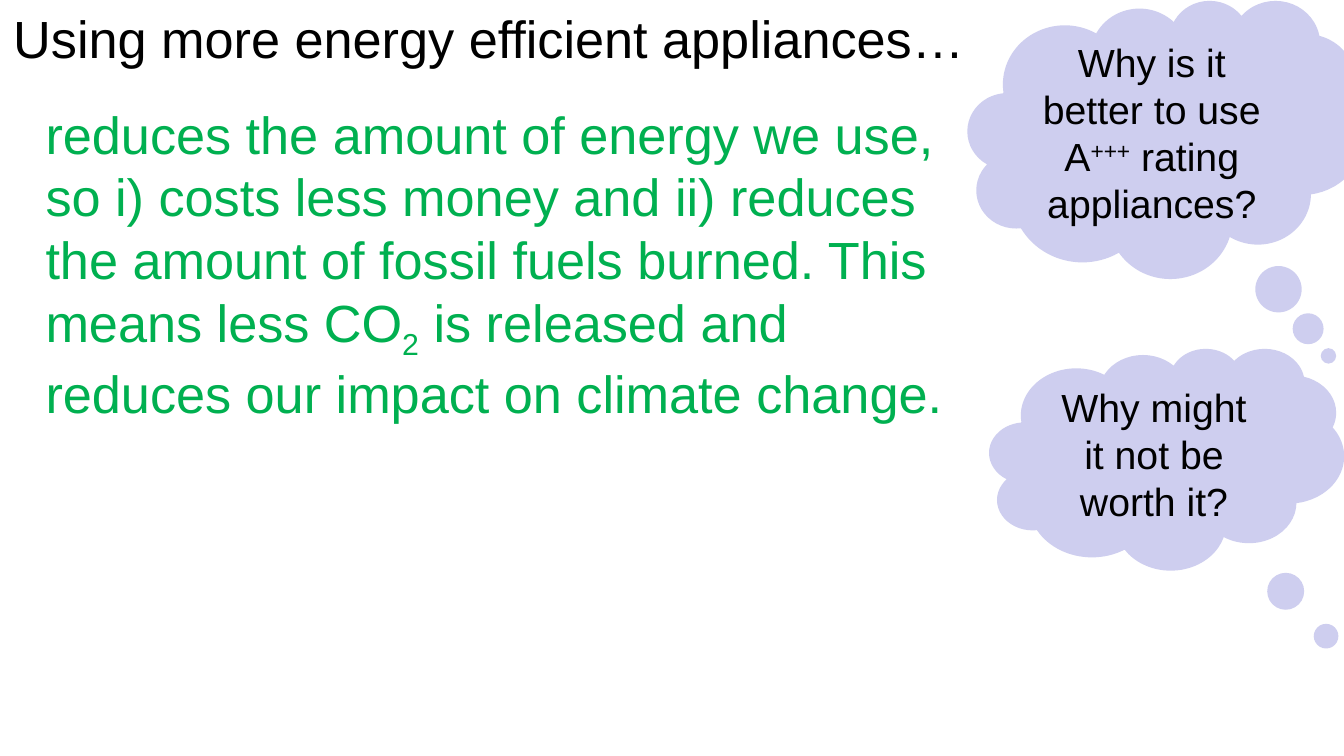
from pptx import Presentation
from pptx.dml.color import RGBColor
from pptx.enum.shapes import MSO_SHAPE as SHAPE
from pptx.enum.text import MSO_ANCHOR as ANCHOR, MSO_AUTO_SIZE as FIT, PP_ALIGN as ALIGN
from pptx.util import Pt

BLACK = RGBColor(0x00, 0x00, 0x00)
GREEN = RGBColor(0x00, 0xB0, 0x50)
LILAC = RGBColor(0xCE, 0xCE, 0xEF)


class Deck:
    """Style and current slide."""
    font = "Arial"
    body_size = 28
    cloud_size = 21

    def __init__(self, width, height):
        self.prs = Presentation()
        self.prs.slide_width, self.prs.slide_height = Pt(width), Pt(height)
        self.s = self.prs.slides.add_slide(self.prs.slide_layouts[6])

    def fill_text(self, tf, runs, size, color, align):
        """Fill one paragraph from (text, baseline in percent) pairs."""
        tf.word_wrap = True
        p = tf.paragraphs[0]
        p.alignment = align
        p.font.name, p.font.size = self.font, Pt(size)
        p.font.color.rgb = color
        for text, baseline in runs:
            r = p.add_run()
            r.text = text
            if baseline:
                r._r.get_or_add_rPr().set("baseline", str(baseline * 1000))

    def text(self, box, runs, color=BLACK):
        tf = self.s.shapes.add_textbox(*map(Pt, box)).text_frame
        self.fill_text(tf, runs, self.body_size, color, ALIGN.LEFT)
        tf.auto_size = FIT.SHAPE_TO_FIT_TEXT

    def cloud(self, box, tail, runs):
        sp = self.s.shapes.add_shape(SHAPE.CLOUD_CALLOUT, *map(Pt, box))
        sp.adjustments[0], sp.adjustments[1] = tail
        sp.shadow.inherit = False
        sp.fill.solid()
        sp.fill.fore_color.rgb = LILAC
        sp.line.fill.background()
        sp.text_frame.vertical_anchor = ANCHOR.MIDDLE
        self.fill_text(sp.text_frame, runs, self.cloud_size, BLACK, ALIGN.CENTER)


def main():
    deck = Deck(720, 405)

    # First question
    deck.cloud((518.4, 0, 212.4, 149), (0.41, 0.78), [
        ("Why is it better to use A", 0), ("+++", 30), (" rating appliances?", 0)])

    # Title and answer
    deck.text((0, 0, 530, 41), [("Using more energy efficient appliances…", 0)])
    deck.text((17.3, 51.1, 500.4, 177), [
        ("reduces the amount of energy we use, so i) costs less money and ii) reduces "
         "the amount of fossil fuels burned. This means less CO", 0),
        ("2", -25),
        (" is released and reduces our impact on climate change.", 0)], GREEN)

    # Second question
    deck.cloud((530, 186.5, 190, 118.8), (0.54, 0.96), [
        ("Why might it not be worth it?", 0)])

    deck.prs.save("out.pptx")


if __name__ == "__main__":
    main()
